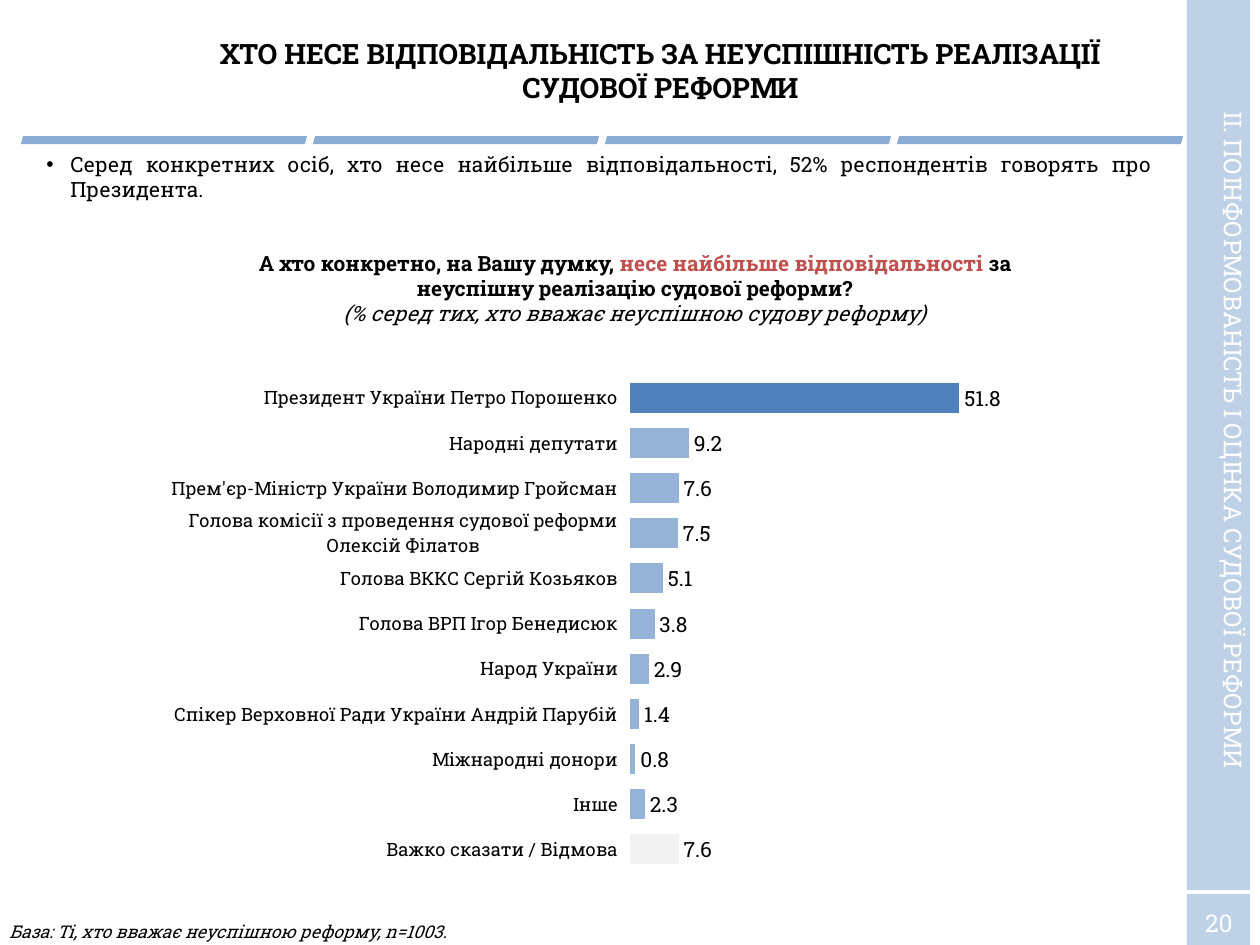
from lxml import etree
from pptx import Presentation
from pptx.chart.data import CategoryChartData
from pptx.dml.color import RGBColor
from pptx.enum.chart import XL_CHART_TYPE, XL_LABEL_POSITION, XL_TICK_MARK
from pptx.enum.shapes import MSO_CONNECTOR, MSO_SHAPE
from pptx.enum.text import MSO_ANCHOR, PP_ALIGN
from pptx.oxml.ns import qn
from pptx.util import Pt

BLUE = RGBColor(0x4F, 0x81, 0xBD)
LIGHT_BLUE = RGBColor(0x95, 0xB3, 0xD7)
GREY = RGBColor(0xF2, 0xF2, 0xF2)
RED = RGBColor(0xC0, 0x50, 0x4D)
BLACK = RGBColor(0, 0, 0)
WHITE = RGBColor(0xFF, 0xFF, 0xFF)

RECT, PARALLELOGRAM = MSO_SHAPE.RECTANGLE, MSO_SHAPE.PARALLELOGRAM
STRAIGHT = MSO_CONNECTOR.STRAIGHT
LEFT, CENTER, JUSTIFY = PP_ALIGN.LEFT, PP_ALIGN.CENTER, PP_ALIGN.JUSTIFY
TOP, MIDDLE = MSO_ANCHOR.TOP, MSO_ANCHOR.MIDDLE
BAR = XL_CHART_TYPE.BAR_CLUSTERED
OUTSIDE_END = XL_LABEL_POSITION.OUTSIDE_END
TICK_OUT = XL_TICK_MARK.OUTSIDE

FONT = "Roboto Slab"
PX_PER_INCH = 126

ANSWERS = [
    ("Президент України Петро Порошенко", 51.8),
    ("Народні депутати", 9.2),
    ("Прем'єр-Міністр України Володимир Гройсман", 7.6),
    ("Голова комісії з проведення судової реформи Олексій Філатов", 7.5),
    ("Голова ВККС Сергій Козьяков", 5.1),
    ("Голова ВРП Ігор Бенедисюк", 3.8),
    ("Народ України", 2.9),
    ("Спікер Верховної Ради України Андрій Парубій", 1.4),
    ("Міжнародні донори", 0.8),
    ("Інше", 2.3),
    ("Важко сказати / Відмова", 7.6),
]


def px(n):
    return round(n * 914400 / PX_PER_INCH)


class Deck:
    def __init__(self, width, height):
        self.prs = Presentation()
        self.prs.slide_width, self.prs.slide_height = px(width), px(height)
        self.slide = self.prs.slides.add_slide(self.prs.slide_layouts[5])

    def style(self, font, size, color=BLACK, bold=False, italic=False):
        font.name, font.size = FONT, Pt(size)
        font.bold, font.italic = bold, italic
        font.color.rgb = color

    def title(self, x, y, w, h, text, size):
        sp = self.slide.shapes.title
        sp.left, sp.top, sp.width, sp.height = map(px, (x, y, w, h))
        tf = sp.text_frame
        tf.text = text
        tf.vertical_anchor = MIDDLE
        p = tf.paragraphs[0]
        p.alignment = CENTER
        self.style(p.runs[0].font, size, bold=True)

    def text(self, x, y, w, h, paragraphs, size, align=LEFT, anchor=TOP, rotation=0):
        sp = self.slide.shapes.add_textbox(px(x), px(y), px(w), px(h))
        sp.rotation = rotation
        tf = sp.text_frame
        tf.word_wrap = True
        tf.vertical_anchor = anchor
        for i, runs in enumerate(paragraphs):
            p = tf.add_paragraph() if i else tf.paragraphs[0]
            p.alignment = align
            for text, look in runs:
                r = p.add_run()
                r.text = text
                self.style(r.font, size, **look)
        return tf

    def bullet(self, x, y, w, h, text, size, indent):
        tf = self.text(x, y, w, h, [[(text, {})]], size, JUSTIFY)
        pPr = tf.paragraphs[0]._p.get_or_add_pPr()
        pPr.set("marL", str(px(indent)))
        pPr.set("indent", str(-px(indent)))
        etree.SubElement(pPr, qn("a:buFont")).set("typeface", "Arial")
        etree.SubElement(pPr, qn("a:buChar")).set("char", "•")

    def shape(self, kind, x, y, w, h, color, opacity):
        sp = self.slide.shapes.add_shape(kind, px(x), px(y), px(w), px(h))
        sp.shadow.inherit = False
        sp.fill.solid()
        sp.fill.fore_color.rgb = color
        clr = sp._element.spPr.find(qn("a:solidFill"))[0]
        etree.SubElement(clr, qn("a:alpha")).set("val", str(opacity * 1000))
        sp.line.fill.background()

    def line(self, x1, y1, x2, y2, color, width):
        s = self.slide.shapes.add_connector(STRAIGHT, px(x1), px(y1), px(x2), px(y2))
        s.line.color.rgb = color
        s.line.width = Pt(width)
        etree.SubElement(s._element.spPr, qn("a:effectLst"))

    def bar_chart(self, x, y, w, h, rows, color, point_colors, axis_max, plot):
        data = CategoryChartData(number_format="0.0")
        data.categories = [name for name, _ in rows]
        data.add_series("Series 1", [value for _, value in rows])
        frame = self.slide.shapes.add_chart(BAR, px(x), px(y), px(w), px(h), data)
        chart = frame.chart
        chart.has_legend = chart.has_title = False
        self.style(chart.font, 10)

        axis = chart.category_axis
        axis.reverse_order = True
        axis.major_tick_mark = TICK_OUT
        axis.format.line.fill.background()
        self.style(axis.tick_labels.font, 10.5)
        values = chart.value_axis
        values.visible = values.has_major_gridlines = False
        values.minimum_scale, values.maximum_scale = 0, axis_max

        bars = chart.plots[0]
        bars.gap_width = 50
        bars.vary_by_categories = False
        series = bars.series[0]
        series.format.fill.solid()
        series.format.fill.fore_color.rgb = color
        for i, point_color in point_colors.items():
            fill = series.points[i].format.fill
            fill.solid()
            fill.fore_color.rgb = point_color
        labels = series.data_labels
        labels.show_value = True
        labels.position = OUTSIDE_END
        labels.number_format, labels.number_format_is_linked = "0.0", False
        self.style(labels.font, 12)
        self.plot_layout(chart, plot)

    def plot_layout(self, chart, plot):
        area = chart._chartSpace.chart.plotArea
        for old in area.findall(qn("c:layout")):
            area.remove(old)
        layout = etree.Element(qn("c:layout"))
        area.insert(0, layout)
        manual = etree.SubElement(layout, qn("c:manualLayout"))
        settings = [("layoutTarget", "inner"), ("xMode", "edge"), ("yMode", "edge")]
        for tag, val in settings + list(zip("xywh", plot)):
            etree.SubElement(manual, qn(f"c:{tag}")).set("val", str(val))


def main():
    deck = Deck(1260, 945)
    deck.shape(RECT, 1187, 0, 63, 945, LIGHT_BLUE, 60)
    for i in range(4):
        deck.shape(PARALLELOGRAM, 21 + 292 * i, 136, 286, 8, BLUE, 65)
    white = {"color": WHITE}
    deck.text(1182, 901, 74, 43, [[("20", white)]], 14, CENTER, MIDDLE)
    deck.line(1187, 892, 1250, 892, WHITE, 2)

    deck.title(145, 23, 1031, 95,
               "ХТО НЕСЕ ВІДПОВІДАЛЬНІСТЬ ЗА НЕУСПІШНІСТЬ РЕАЛІЗАЦІЇ СУДОВОЇ РЕФОРМИ", 16)
    deck.text(872, 404, 693, 72,
              [[("ІІ. ПОІНФОРМОВАНІСТЬ І ОЦІНКА СУДОВОЇ РЕФОРМИ", white)]],
              14, CENTER, rotation=90)
    bold = {"bold": True}
    deck.text(243, 244, 784, 89, [
        [("А хто конкретно, на Вашу думку, ", bold),
         ("несе найбільше відповідальності ", {"bold": True, "color": RED}),
         ("за неуспішну реалізацію судової реформи?", bold)],
        [("(% серед тих, хто вважає неуспішною судову реформу)", {"italic": True})],
    ], 12, CENTER)
    deck.bar_chart(154, 370, 953, 523, ANSWERS, LIGHT_BLUE,
                   {0: BLUE, len(ANSWERS) - 1: GREY}, 60, (0.5, 0.01, 0.4, 0.95))
    deck.text(-3, 915, 1187, 34,
              [[("База: Ті, хто вважає неуспішною реформу, n=1003.", {"italic": True})]], 10)
    deck.bullet(34, 145, 1131, 92,
                "Серед конкретних осіб, хто несе найбільше відповідальності, "
                "52% респондентів говорять про Президента.", 12, 24)
    deck.prs.save("out.pptx")


if __name__ == "__main__":
    main()
